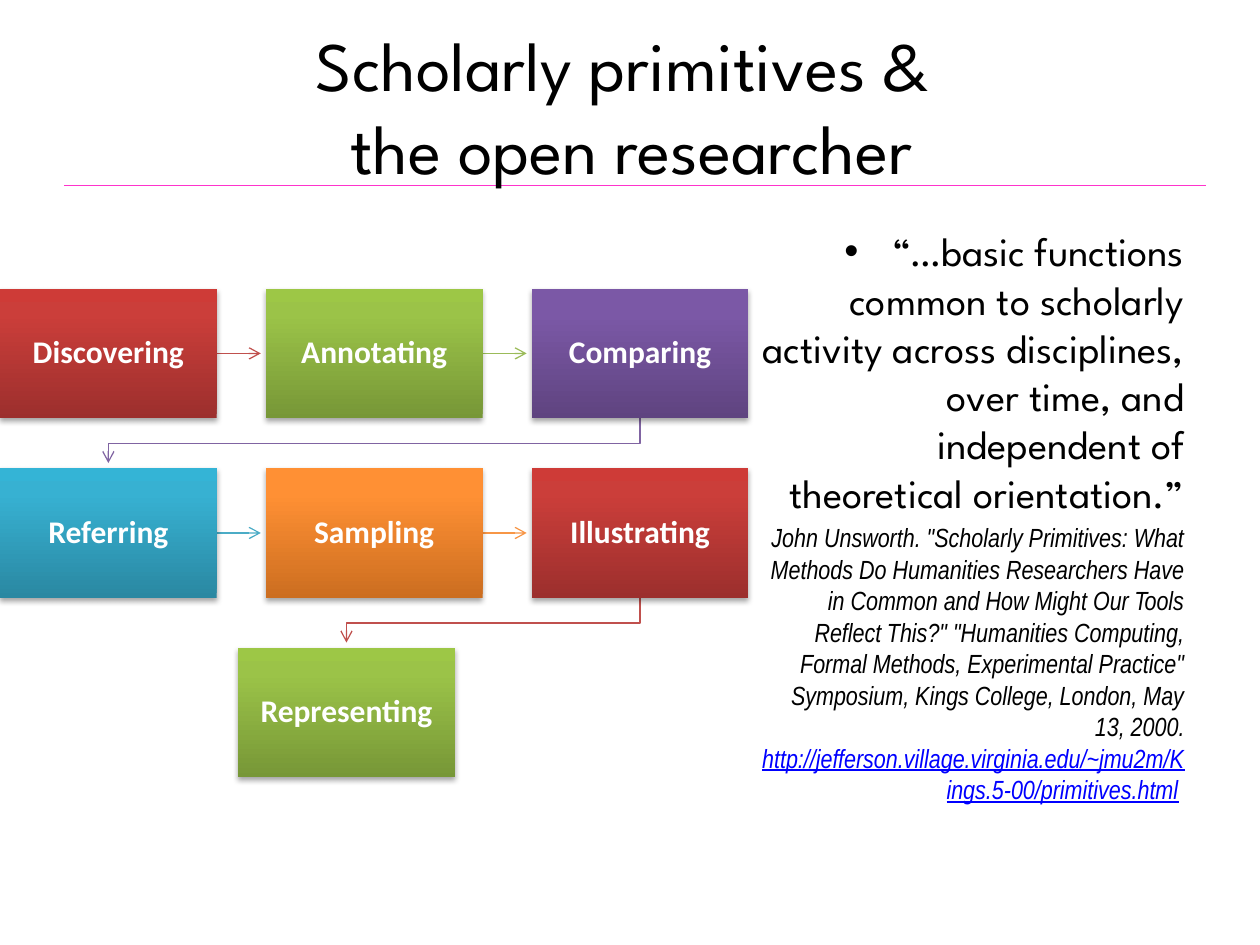
from dataclasses import dataclass

from lxml.etree import SubElement as Sub
from pptx import Presentation
from pptx.dml.color import RGBColor as Rgb
from pptx.enum.shapes import MSO_CONNECTOR as Conn, MSO_SHAPE as Kind
from pptx.enum.text import MSO_ANCHOR as Anchor, PP_ALIGN as Align
from pptx.oxml.ns import qn
from pptx.util import Inches, Pt


@dataclass(frozen=True)
class Tone:
    line: str
    dark: str
    mid: str
    light: str


@dataclass(frozen=True)
class Theme:
    ink: str = "000000"
    white: str = "FFFFFF"
    rule: str = "FF33CC"
    link: str = "0000FF"
    head: str = "League Spartan"
    cite: str = "Arial Narrow"
    label: str = "Calibri"
    title: float = 39.6
    quote: float = 23
    source: float = 15
    step: float = 18
    red: Tone = Tone("C0504D", "9C2F2D", "CB3E3A", "CE3B37")
    green: Tone = Tone("9BBB59", "779737", "9BC348", "9DC746")
    violet: Tone = Tone("8064A2", "5F4480", "7B58A6", "7C57A8")
    blue: Tone = Tone("4BACC6", "2A88A2", "37B1D2", "34B4D6")
    orange: Tone = Tone("F79646", "CC6E20", "FF9034", "FF9136")


@dataclass(frozen=True)
class Step:
    name: str
    tone: Tone
    left: float
    top: float


THEME = Theme()
WIDE, HIGH = 1.72, 1.03
COL, ROW, TOP = 2.11, 1.425, 2.29
GAP, DROP = 0.04, 0.2


def add_run(para, text: str, font: str, size: float, color: str,
            bold: bool = False, slant: bool = False, under: bool = False) -> None:
    run = para.add_run()
    run.text = text
    face = run.font
    face.name, face.size = font, Pt(size)
    face.bold, face.italic, face.underline = bold, slant, under
    face.color.rgb = Rgb.from_string(color)


def add_frame(slide, left: float, top: float, wide: float, high: float):
    frame = slide.shapes.add_textbox(
        Inches(left), Inches(top), Inches(wide), Inches(high)).text_frame
    frame.word_wrap = True
    return frame


def add_color(node, color: str):
    return Sub(node, qn("a:srgbClr"), val=color)


def style_line(shape, color: str, arrow: bool = True) -> None:
    shape.line.color.rgb = Rgb.from_string(color)
    shape.line.width = Pt(0.75)
    if arrow:
        Sub(shape.line._get_or_add_ln(), qn("a:tailEnd"), type="arrow")


def add_line(slide, start: tuple, end: tuple, color: str, arrow: bool = True) -> None:
    line = slide.shapes.add_connector(
        Conn.STRAIGHT, *(Inches(n) for n in (*start, *end)))
    style_line(line, color, arrow)
    Sub(line._element.spPr, qn("a:effectLst"))


def add_elbow(slide, points: list[tuple], color: str) -> None:
    first, *rest = [(Inches(x), Inches(y)) for x, y in points]
    pen = slide.shapes.build_freeform(*first)
    pen.add_line_segments(rest, close=False)
    shape = pen.convert_to_shape()
    shape.fill.background()
    shape.shadow.inherit = False
    style_line(shape, color)


def add_fill(props, tone: Tone) -> None:
    grad = Sub(props, qn("a:gradFill"), rotWithShape="1")
    stops = Sub(grad, qn("a:gsLst"))
    for pos, color in ((0, tone.dark), (80, tone.mid), (100, tone.light)):
        add_color(Sub(stops, qn("a:gs"), pos=str(pos * 1000)), color)
    Sub(grad, qn("a:lin"), ang="16200000", scaled="0")
    props.find(qn("a:prstGeom")).addnext(grad)


def add_shade(props) -> None:
    shade = Sub(props.find(qn("a:effectLst")), qn("a:outerShdw"),
                blurRad=str(Pt(3.1)), dist=str(Pt(1.8)),
                dir="5400000", rotWithShape="0")
    Sub(add_color(shade, THEME.ink), qn("a:alpha"), val="35000")


def add_step(slide, step: Step) -> None:
    box = slide.shapes.add_shape(
        Kind.RECTANGLE, Inches(step.left), Inches(step.top), Inches(WIDE), Inches(HIGH))
    box.line.fill.background()
    box.shadow.inherit = False
    props = box._element.spPr
    add_fill(props, step.tone)
    add_shade(props)
    frame = box.text_frame
    frame.word_wrap = True
    frame.vertical_anchor = Anchor.MIDDLE
    frame.margin_left = frame.margin_right = Inches(0.14)
    frame.margin_top = frame.margin_bottom = Inches(0.14)
    para = frame.paragraphs[0]
    para.alignment = Align.CENTER
    para.line_spacing = 0.9
    add_run(para, step.name, THEME.label, THEME.step, THEME.white, bold=True)


def add_link(slide, step: Step, after: Step) -> None:
    if step.top == after.top:
        mid = step.top + HIGH / 2
        add_line(slide, (step.left + WIDE, mid), (after.left - GAP, mid), step.tone.line)
        return
    start, end = step.left + WIDE / 2, after.left + WIDE / 2
    base = step.top + HIGH
    add_elbow(slide, [(start, base), (start, base + DROP), (end, base + DROP),
                      (end, after.top - GAP)], step.tone.line)


def add_title(slide) -> None:
    frame = add_frame(slide, 0.51, 0.21, 9, 1.25)
    frame.vertical_anchor = Anchor.MIDDLE
    para = frame.paragraphs[0]
    para.alignment = Align.CENTER
    add_run(para, "Scholarly primitives & ", THEME.head, THEME.title, THEME.ink)
    para.add_line_break()
    add_run(para, "the open researcher", THEME.head, THEME.title, THEME.ink)


def add_quote(slide) -> None:
    frame = add_frame(slide, 5.55, 1.75, 3.95, 4.95)
    quote, source = frame.paragraphs[0], frame.add_paragraph()
    for para in (quote, source):
        para.alignment = Align.RIGHT
        para._p.get_or_add_pPr().set("marL", str(Inches(0.38)))
    props = quote._p.get_or_add_pPr()
    props.set("indent", str(Inches(-0.38)))
    Sub(props, qn("a:buFont"), typeface="Arial")
    Sub(props, qn("a:buChar"), char="•")
    source.space_before = Pt(3)
    add_run(quote, "“…basic functions common to scholarly activity across disciplines, "
            "over time, and independent of theoretical orientation.”",
            THEME.head, THEME.quote, THEME.ink)
    add_run(source, 'John Unsworth. "Scholarly Primitives: What Methods Do Humanities '
            'Researchers Have in Common and How Might Our Tools Reflect This?" '
            '"Humanities Computing, Formal Methods, Experimental Practice" '
            "Symposium, Kings College, London, May 13, 2000. ",
            THEME.cite, THEME.source, THEME.ink, slant=True)
    add_run(source, "http://jefferson.village.virginia.edu/~jmu2m/Kings.5-00/primitives.html",
            THEME.cite, THEME.source, THEME.link, slant=True, under=True)
    add_run(source, " ", THEME.cite, THEME.source, THEME.ink)


def main() -> None:
    deck = Presentation()
    deck.slide_width, deck.slide_height = Inches(10), Inches(7.5)
    slide = deck.slides.add_slide(deck.slide_layouts[6])
    add_line(slide, (0.51, 1.47), (9.57, 1.47), THEME.rule, arrow=False)
    add_title(slide)
    add_quote(slide)
    names = (("Discovering", THEME.red), ("Annotating", THEME.green),
             ("Comparing", THEME.violet), ("Referring", THEME.blue),
             ("Sampling", THEME.orange), ("Illustrating", THEME.red))
    steps = [Step(name, tone, i % 3 * COL, TOP + i // 3 * ROW)
             for i, (name, tone) in enumerate(names)]
    steps.append(Step("Representing", THEME.green, 1.89, TOP + 2 * ROW))
    for step, after in zip(steps, steps[1:]):
        add_link(slide, step, after)
    for step in steps:
        add_step(slide, step)
    deck.save("out.pptx")


if __name__ == "__main__":
    main()
